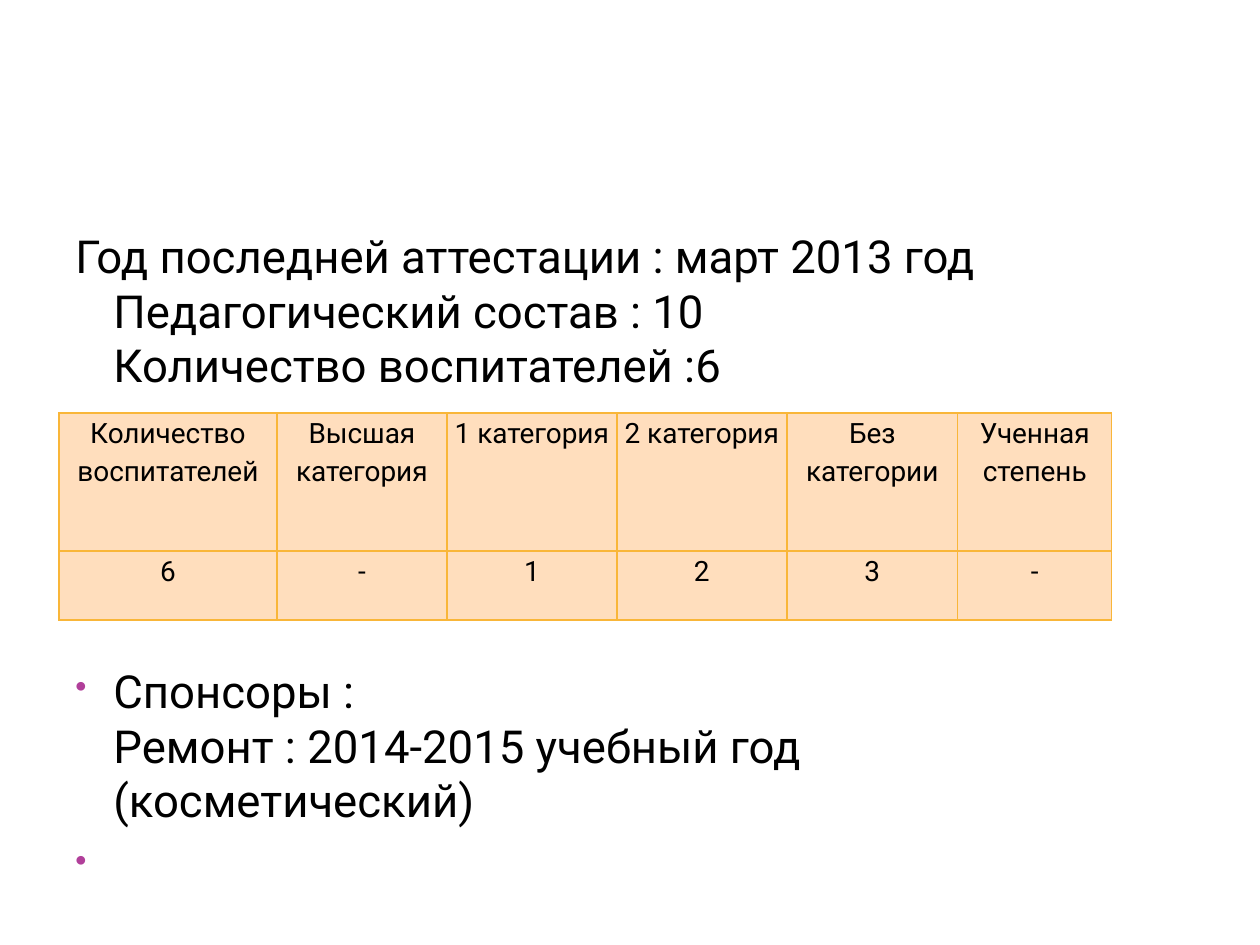
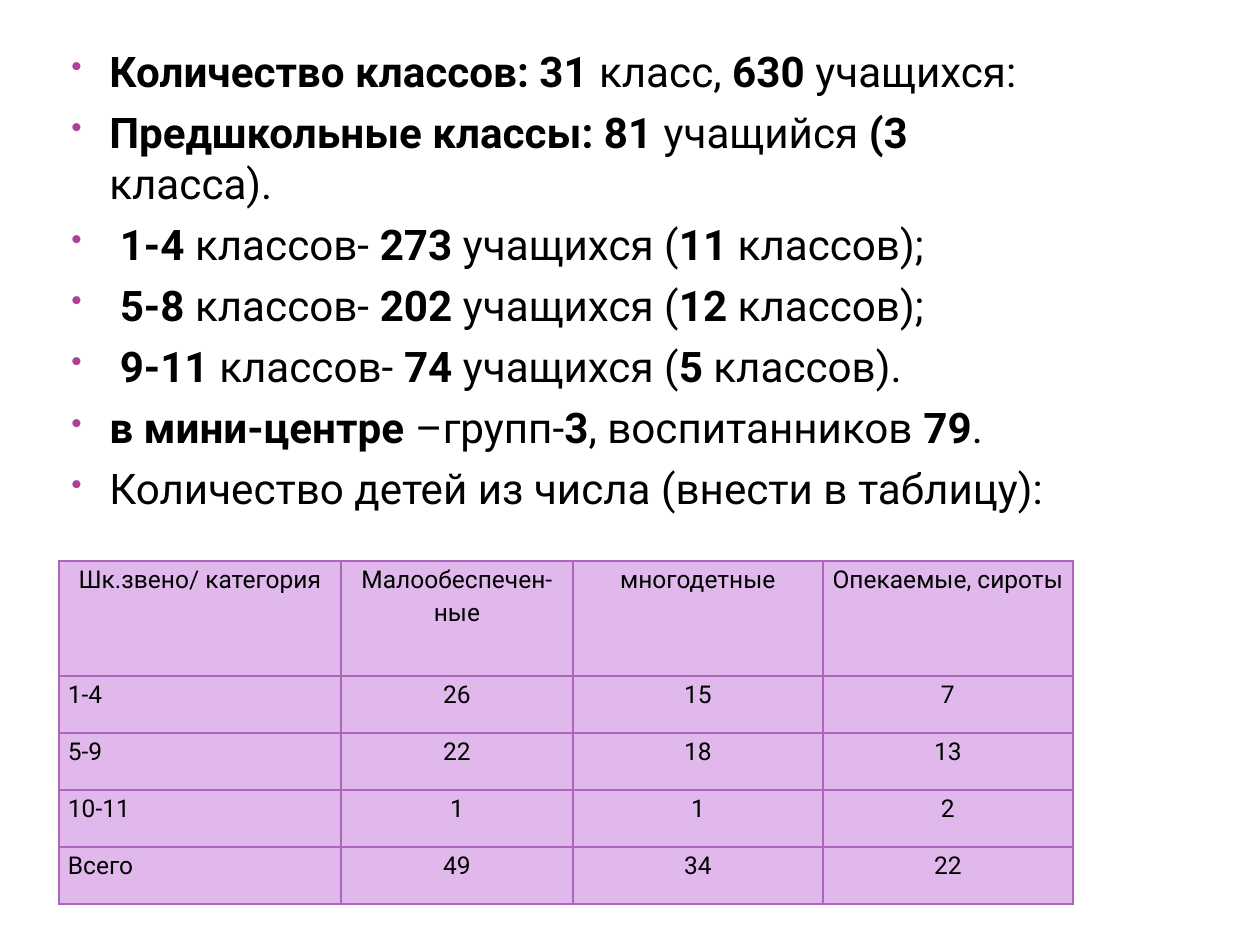
from lxml import etree
from pptx import Presentation
from pptx import util as u
from pptx.dml.color import RGBColor
from pptx.enum import text as t
from pptx.oxml import ns

SCALE = 914400 / 126
FONT = "Roboto"
BLACK = RGBColor(0x00, 0x00, 0x00)
PLUM = RGBColor(0xB1, 0x3F, 0x9A)
PEACH = RGBColor(0xFF, 0xDE, 0xBD)
AMBER = RGBColor(0xF9, 0xB6, 0x39)
LILAC = RGBColor(0xE1, 0xB8, 0xEB)
VIOLET = RGBColor(0xAC, 0x66, 0xBB)
LEFT = 59
HANG = 38
EDGES = ("lnL", "lnR", "lnT", "lnB")
CENTER = t.PP_ALIGN.CENTER
JUSTIFY = t.PP_ALIGN.JUSTIFY


def px(n):
    return u.Emu(round(n * SCALE))


def assign(item, values):
    for name, value in values.items():
        setattr(item, name, value)


def sub(parent, tag, **attrs):
    return etree.SubElement(parent, ns.qn("a:" + tag), attrs)


class Deck:
    def __init__(self):
        self.prs = Presentation()
        assign(self.prs, {"slide_width": px(1260), "slide_height": px(945)})

    def page(self):
        self.slide = self.prs.slides.add_slide(self.prs.slide_layouts[6])

    def style(self, font, size, bold=False):
        assign(font, {"name": FONT, "size": u.Pt(size), "bold": bold})
        font.color.rgb = BLACK

    def label(self, para, line, size):
        """Add runs to a paragraph; each asterisk turns bold on or off."""
        for i, part in enumerate(line.split("*")):
            for j, piece in enumerate(part.split("\n")):
                if j:
                    para.add_line_break()
                if piece:
                    run = para.add_run()
                    run.text = piece
                    self.style(run.font, size, i % 2 == 1)

    def body(self, place, lines, size, bullet=True):
        frame = self.slide.shapes.add_textbox(*map(px, place)).text_frame
        assign(frame, {"word_wrap": True, "auto_size": t.MSO_AUTO_SIZE.NONE})
        for i, line in enumerate(lines):
            para = frame.add_paragraph() if i else frame.paragraphs[0]
            props = para._p.get_or_add_pPr()
            props.set("marL", str(px(HANG)))
            props.set("indent", str(-px(HANG)))
            if bullet:
                sub(sub(props, "buClr"), "srgbClr", val=str(PLUM))
                sub(props, "buSzPct", val="73000")
                sub(props, "buChar", char="•")
            para.space_before = u.Pt(6 if i else 0)
            self.style(para.font, size)
            self.label(para, line, size)

    def border(self, cell, color):
        props = cell._tc.get_or_add_tcPr()
        for edge in EDGES:
            line = sub(props, edge, w=str(u.Pt(0.9)))
            sub(sub(line, "solidFill"), "srgbClr", val=str(color))

    def table(self, top, cols, rows, data, size, fill, line,
              inset=0, after=0, first=CENTER):
        """Draw a grid; first is the alignment of column one below the head."""
        place = map(px, (LEFT, top, sum(cols), sum(rows)))
        grid = self.slide.shapes.add_table(len(rows), len(cols), *place).table
        assign(grid, {"first_row": False, "horz_banding": False})
        for col, width in zip(grid.columns, cols):
            col.width = px(width)
        for row, height in zip(grid.rows, rows):
            row.height = px(height)
        for r, words in enumerate(data):
            for c, word in enumerate(words):
                cell = grid.cell(r, c)
                assign(cell, {"margin_left": px(inset), "margin_top": 0,
                              "margin_right": px(inset), "margin_bottom": 0})
                self.border(cell, line)
                cell.fill.solid()
                cell.fill.fore_color.rgb = fill
                para = cell.text_frame.paragraphs[0]
                assign(para, {"alignment": first if r and not c else CENTER,
                              "line_spacing": 1.15,
                              "space_after": u.Pt(after)})
                self.label(para, word, size)


def staff(deck):
    deck.page()
    deck.body((63, 222, 998, 180), [
        "Год последней аттестации : март 2013 год\n"
        "Педагогический состав : 10\nКоличество воспитателей :6",
    ], 26, bullet=False)
    deck.body((63, 657, 998, 233), [
        "Спонсоры :\nРемонт : 2014-2015 учебный год (косметический)",
        " ",
    ], 26)
    deck.table(413, [218, 170, 170, 170, 171, 154], [138, 69], [
        ["Количество воспитателей", "Высшая категория", "1 категория",
         "2 категория", "Без категории", "Ученная степень"],
        ["6", "-", "1", "2", "3", "-"],
    ], 16, PEACH, AMBER)


def pupils(deck):
    deck.page()
    deck.body((LEFT, 39, 998, 512), [
        "*Количество классов: 31* класс, *630* учащихся:",
        "*Предшкольные классы: 81* учащийся* (3* класса).",
        " *1-4* классов- *273* учащихся (*11* классов);",
        " *5-8* классов- *202* учащихся (*12* классов);",
        " *9-11* классов- *74* учащихся (*5* классов).",
        "*в мини-центре* –групп-*3*, воспитанников *79*.",
        "Количество детей из числа (внести в таблицу):",
    ], 24.1)
    deck.table(561, [282, 232, 250, 250], [115] + [57] * 4, [
        ["Шк.звено/ категория", "Малообеспечен-ные", "многодетные",
         "Опекаемые, сироты"],
        ["1-4", "26", "15", "7"],
        ["5-9", "22", "18", "13"],
        ["10-11", "1", "1", "2"],
        ["Всего", "49", "34", "22"],
    ], 14, LILAC, VIOLET, inset=9, after=10, first=JUSTIFY)


def main():
    deck = Deck()
    staff(deck)
    pupils(deck)
    deck.prs.save("out.pptx")


if __name__ == "__main__":
    main()
